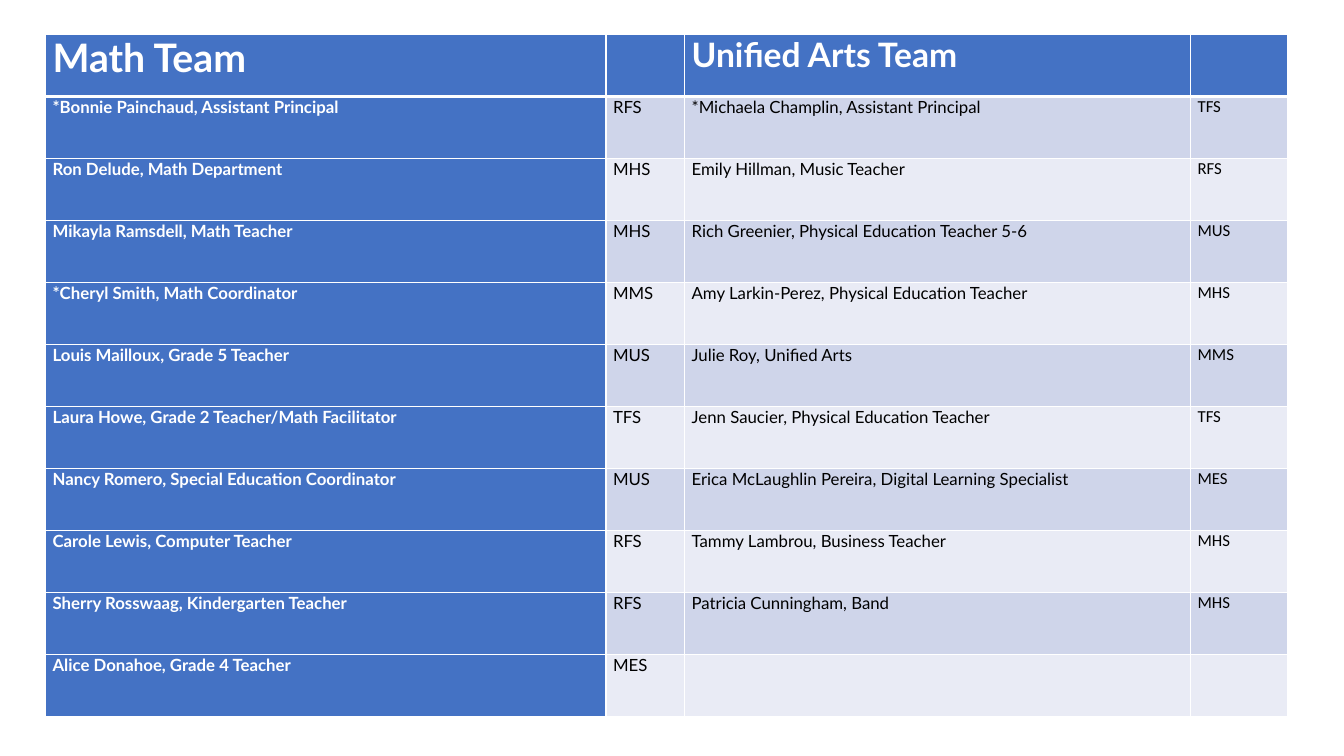
import pptx
import pptx.dml.color
import pptx.oxml
import pptx.oxml.ns
import pptx.util
from pptx.util import Pt

BLUE, WHITE, BLACK = "4472C4", "FFFFFF", "000000"
BANDS = ["CFD5EA", "E9EBF5"]
COLUMN_WIDTHS = [400.3, 56.2, 361.4, 69.1]
HEADER_HEIGHT = 44.6
TEAM_ROWS = [
    ("Math Team", "", "Unified Arts Team", ""),
    ("*Bonnie Painchaud, Assistant Principal", "RFS", "*Michaela Champlin, Assistant Principal", "TFS"),
    ("Ron Delude, Math Department", "MHS", "Emily Hillman, Music Teacher", "RFS"),
    ("Mikayla Ramsdell, Math Teacher", "MHS", "Rich Greenier, Physical Education Teacher 5-6", "MUS"),
    ("*Cheryl Smith, Math Coordinator", "MMS", "Amy Larkin-Perez, Physical Education Teacher", "MHS"),
    ("Louis Mailloux, Grade 5 Teacher", "MUS", "Julie Roy, Unified Arts", "MMS"),
    ("Laura Howe, Grade 2 Teacher/Math Facilitator", "TFS", "Jenn Saucier, Physical Education Teacher", "TFS"),
    ("Nancy Romero, Special Education Coordinator", "MUS",
     "Erica McLaughlin Pereira, Digital Learning Specialist", "MES"),
    ("Carole Lewis, Computer Teacher", "RFS", "Tammy Lambrou, Business Teacher", "MHS"),
    ("Sherry Rosswaag, Kindergarten Teacher", "RFS", "Patricia Cunningham, Band", "MHS"),
    ("Alice Donahoe, Grade 4 Teacher", "MES", "", ""),
]


def color(hex_string):
    """Return the colour for a hex string."""
    return pptx.dml.color.RGBColor.from_string(hex_string)


def set_attributes(target, values):
    """Set every attribute named in a dict of format values."""
    for name, value in values.items():
        setattr(target, name, value)


def add_borders(cell, widths):
    """Draw white cell borders, with widths in points by side."""
    properties = cell._tc.get_or_add_tcPr()
    for side, width in widths.items():
        properties.append(pptx.oxml.parse_xml(
            f'<a:ln{side} {pptx.oxml.ns.nsdecls("a")} w="{Pt(width)}">'
            f'<a:solidFill><a:srgbClr val="{WHITE}"/></a:solidFill></a:ln{side}>'))


def fill_cell(cell, text, row, column):
    """Write and format one cell according to its row and column."""
    header = row == 0
    strong = header or column == 0
    set_attributes(cell, {"margin_left": Pt(5), "margin_right": Pt(5),
                          "margin_top": 0, "margin_bottom": 0})
    add_borders(cell, {"L": 1, "R": 1, "T": 3 if row == 1 else 1, "B": 3 if header else 1})
    cell.fill.solid()
    cell.fill.fore_color.rgb = color(BLUE if strong else BANDS[(row - 1) % 2])
    if text:
        run = cell.text_frame.paragraphs[0].add_run()
        run.text = text
        size = (28 if column == 0 else 24) if header else 12
        set_attributes(run.font, {"name": "Calibri" if column == 3 else "Lato",
                                  "size": Pt(size), "bold": strong})
        run.font.color.rgb = color(WHITE if strong else BLACK)


def add_team_table(slide, left, top, width, height):
    """Place the team table in the given box."""
    shape = slide.shapes.add_table(len(TEAM_ROWS), len(COLUMN_WIDTHS),
                                   Pt(left), Pt(top), Pt(width), Pt(height))
    table = shape.table
    for column, column_width in zip(table.columns, COLUMN_WIDTHS):
        column.width = Pt(column_width * width / sum(COLUMN_WIDTHS))
    member_height = (height - HEADER_HEIGHT) / (len(TEAM_ROWS) - 1)
    for row, texts in enumerate(TEAM_ROWS):
        table.rows[row].height = Pt(member_height if row else HEADER_HEIGHT)
        for column, text in enumerate(texts):
            fill_cell(table.cell(row, column), text, row, column)


def main():
    """Build and save the presentation."""
    presentation = pptx.Presentation()
    set_attributes(presentation, {"slide_width": Pt(960), "slide_height": Pt(540)})
    slide = presentation.slides.add_slide(presentation.slide_layouts[6])
    add_team_table(slide, 32.6, 24.4, 887, 487.4)
    presentation.save("out.pptx")


if __name__ == "__main__":
    main()
